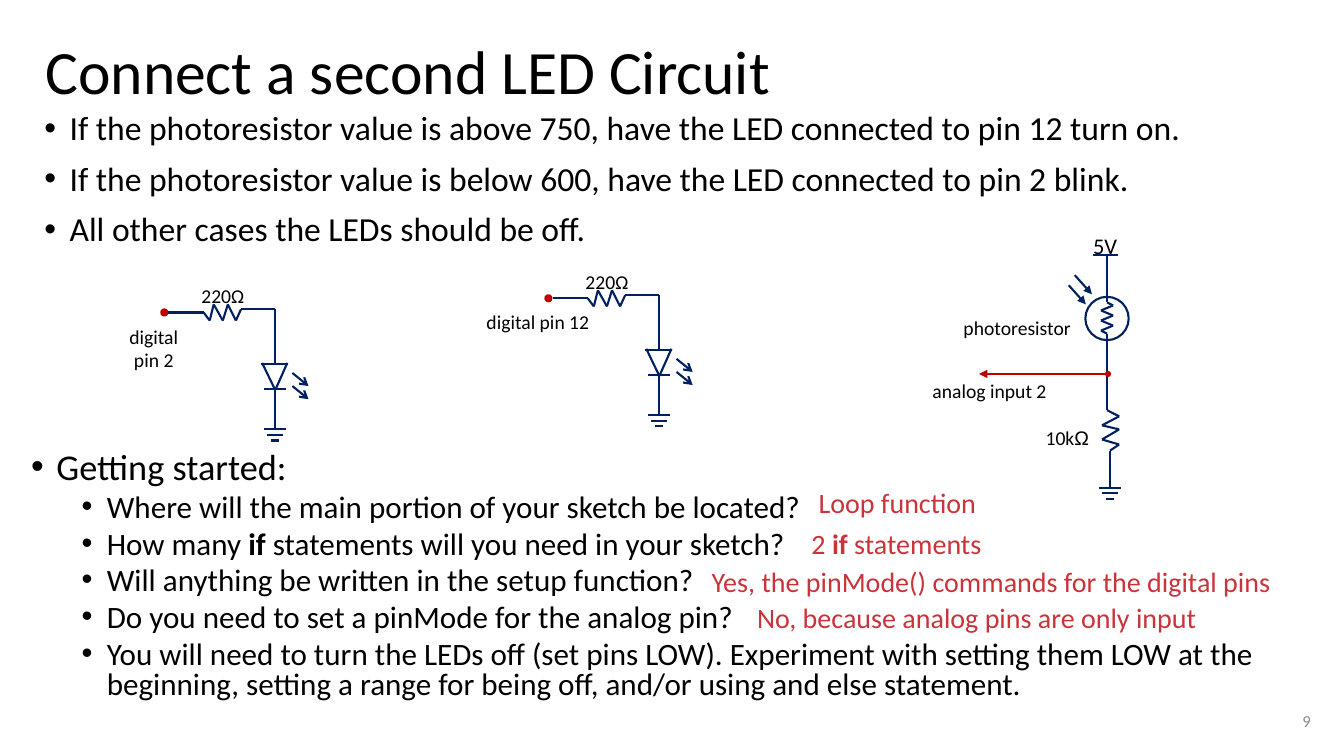
from lxml.etree import SubElement
from pptx import Presentation
from pptx.dml.color import RGBColor
from pptx.enum.shapes import MSO_CONNECTOR as Conn, MSO_SHAPE as Kind
from pptx.enum.text import MSO_ANCHOR as Anchor, MSO_AUTO_SIZE as Fit, PP_ALIGN as Align
from pptx.oxml.ns import qn
from pptx.util import Inches, Pt

INK = RGBColor(0x00, 0x00, 0x00)
NAVY = RGBColor(0x00, 0x20, 0x60)
RED = RGBColor(0xC0, 0x00, 0x00)
ROSE = RGBColor(0xCB, 0x33, 0x3B)
GREY = RGBColor(0x8C, 0x8C, 0x8C)
FACE = "Calibri"

RULES = [
    "If the photoresistor value is above 750, have the LED connected to pin 12 turn on.",
    "If the photoresistor value is below 600, have the LED connected to pin 2 blink.",
    "All other cases the LEDs should be off.",
]
STEPS = [
    "Where will the main portion of your sketch be located?",
    "How many *if* statements will you need in your sketch?",
    "Will anything be written in the setup function?",
    "Do you need to set a pinMode for the analog pin?",
    "You will need to turn the LEDs off (set pins LOW). Experiment with setting them LOW "
    "at the beginning, setting a range for being off, and/or using and else statement.",
]
REPLIES = [
    ("Loop function", (8.02, 4.77, 2.09, 0.44)),
    ("2 *if *statements", (7.95, 5.17, 2.09, 0.44)),
    ("Yes, the pinMode() commands for the digital pins", (6.96, 5.55, 5.9, 0.44)),
    ("No, because analog pins are only input", (7.41, 5.91, 4.61, 0.44)),
]


def put(para, text, size, color=INK, face=FACE):
    """Add runs to a paragraph; words between asterisks are bold."""
    for i, part in enumerate(text.split("*")):
        run = para.add_run()
        run.text = part
        run.font.name, run.font.size = face, Pt(size)
        run.font.bold = i % 2 == 1
        run.font.color.rgb = color


def place(shape, box):
    """Move a shape to a box given in inches."""
    shape.left, shape.top, shape.width, shape.height = map(Inches, box)


def label(shapes, text, box, size=14, color=INK, align=Align.CENTER, gap=1.15):
    """Add a one-paragraph text box and return it."""
    item = shapes.add_textbox(*map(Inches, box))
    item.text_frame.word_wrap = True
    para = item.text_frame.paragraphs[0]
    para.alignment, para.line_spacing = align, gap
    put(para, text, size, color)
    return item


def wire(shapes, at, points, color=NAVY, head=None):
    """Join points, taken from an origin, with straight lines."""
    spots = [(Inches(at[0] + x), Inches(at[1] + y)) for x, y in points]
    for start, end in zip(spots, spots[1:]):
        line = shapes.add_connector(Conn.STRAIGHT, *start, *end)
        line.line.color.rgb, line.line.width = color, Pt(1.5)
        if head:
            SubElement(line.line._get_or_add_ln(), qn("a:tailEnd"), type=head)
        SubElement(line._element.spPr, qn("a:effectLst"))


def disc(shapes, x, y, size, fill=None, edge=None):
    """Draw a circle around a centre."""
    item = shapes.add_shape(Kind.OVAL, Inches(x - size / 2), Inches(y - size / 2),
                            Inches(size), Inches(size))
    item.shadow.inherit = False
    if fill:
        item.fill.solid()
        item.fill.fore_color.rgb = fill
    else:
        item.fill.background()
    if edge:
        item.line.color.rgb, item.line.width = edge, Pt(1.5)
    else:
        item.line.fill.background()


def ground(shapes, x, y):
    """Draw the three bars of a ground symbol."""
    for i, half in enumerate((0.11, 0.08, 0.04)):
        wire(shapes, (x, y + 0.055 * i), [(-half, 0), (half, 0)])


def led(slide, at, name, box):
    """Draw a resistor and LED circuit from its pin dot."""
    x, y = at
    shapes = slide.shapes.add_group_shape().shapes
    label(shapes, "220Ω", (x + 0.21, y - 0.37, 0.74, 0.37))
    wire(shapes, at, [(0.04, 0), (0.39, 0), (0.45, 0.08), (0.49, -0.08), (0.58, 0.08),
                      (0.63, -0.08), (0.71, 0.08), (0.76, -0.03), (1.1, -0.03), (1.1, 0.51)])
    disc(shapes, x, y, 0.06, RED, RED)
    wire(shapes, at, [(0.96, 0.51), (1.23, 0.51)])
    wire(shapes, at, [(0.97, 0.5), (1.1, 0.77), (1.22, 0.5)])
    wire(shapes, at, [(0.99, 0.76), (1.21, 0.76)])
    wire(shapes, at, [(1.1, 0.77), (1.1, 1.16)])
    ground(shapes, x + 1.1, y + 1.16)
    for drop in (0.6, 0.73):
        wire(shapes, at, [(1.27, drop), (1.43, drop + 0.13)], head="arrow")
    dx, dy, wide, high = box
    label(shapes, name, (x + dx, y + dy, wide, high), gap=1)


def sensor(slide, at):
    """Draw the photoresistor divider from its supply point."""
    x, y = at
    shapes = slide.shapes.add_group_shape().shapes
    label(shapes, "5V", (x - 0.31, y - 0.32, 0.58, 0.4), 16)
    wire(shapes, at, [(-0.14, 0), (0.11, 0)])
    disc(shapes, x, y + 0.63, 0.43, edge=NAVY)
    wire(shapes, at, [(0, 0), (0, 0.47), (0.06, 0.5), (-0.06, 0.55), (0.06, 0.6),
                      (-0.06, 0.65), (0.06, 0.7), (-0.06, 0.75), (0, 0.78), (0, 1.54),
                      (0.12, 1.6), (-0.05, 1.69), (0.12, 1.73), (-0.05, 1.83),
                      (0.12, 1.88), (0.03, 1.94), (0.03, 2.31)])
    ground(shapes, x + 0.03, y + 2.31)
    for dx, dy in ((-0.38, 0.3), (-0.32, 0.2)):
        wire(shapes, at, [(dx, dy), (dx + 0.17, dy + 0.19)], head="triangle")
    disc(shapes, x + 0.01, y + 1.18, 0.06, RED)
    wire(shapes, at, [(-0.02, 1.18), (-1.27, 1.18)], RED, "triangle")
    label(shapes, "photoresistor", (x - 1.86, y + 0.52, 1.6, 0.27), align=Align.RIGHT)
    label(shapes, "analog input 2", (x - 1.86, y + 1.15, 1.36, 0.32), align=Align.RIGHT)
    ohms = label(shapes, "10k", (x - 1.07, y + 1.61, 0.99, 0.3), align=Align.RIGHT)
    put(ohms.text_frame.paragraphs[0], "Ω", 14, face="Arial")


def bullets(body, box, rows, gap):
    """Fill a body with rows of text, level, size and space before."""
    place(body, box)
    frame = body.text_frame
    frame.auto_size, frame.vertical_anchor = Fit.NONE, Anchor.TOP
    for i, (text, level, size, before) in enumerate(rows):
        para = frame.add_paragraph() if i else frame.paragraphs[0]
        para.level, para.line_spacing = level, gap
        para.space_before = Pt(before if i else 0)
        props = para._p.get_or_add_pPr()
        props.set("marL", str(Inches(0.25 + 0.5 * level)))
        props.set("indent", str(Inches(-0.25)))
        SubElement(props, qn("a:buFont"), typeface="Arial")
        SubElement(props, qn("a:buChar"), char="•")
        put(para, text, size)


def heading(title, box):
    """Set the slide title."""
    place(title, box)
    frame = title.text_frame
    frame.auto_size, frame.vertical_anchor = Fit.NONE, Anchor.TOP
    frame.paragraphs[0].alignment = Align.LEFT
    put(frame.paragraphs[0], "Connect a second LED Circuit", 44)


def main():
    """Build and save the slide."""
    deck = Presentation()
    deck.slide_width, deck.slide_height = Inches(13.33), Inches(7.5)
    slide = deck.slides.add_slide(deck.slide_layouts[3])
    title, first, second = slide.placeholders
    heading(title, (0.35, 0.28, 9, 0.74))
    bullets(first, (0.34, 1.06, 11.84, 1.57), [(rule, 0, 24, 10) for rule in RULES], 0.9)
    steps = [("Getting started:", 0, 25.9, 10)] + [(step, 1, 22.2, 5) for step in STEPS]
    bullets(second, (0.21, 4.44, 12.52, 2.78), steps, 0.8)
    led(slide, (1.63, 3.1), "digital pin 2", (-0.55, 0.07, 0.89, 0.26))
    led(slide, (5.44, 2.96), "digital pin 12", (-0.76, 0.07, 1.31, 0.34))
    sensor(slide, (10.98, 2.53))
    for text, box in REPLIES:
        label(slide.shapes, text, box, 20, ROSE, Align.LEFT, 1)
    page = label(slide.shapes, "9", (9.42, 6.95, 3.68, 0.4), 12, GREY, Align.RIGHT, 1)
    page.text_frame.vertical_anchor = Anchor.MIDDLE
    deck.save("out.pptx")


if __name__ == "__main__":
    main()
